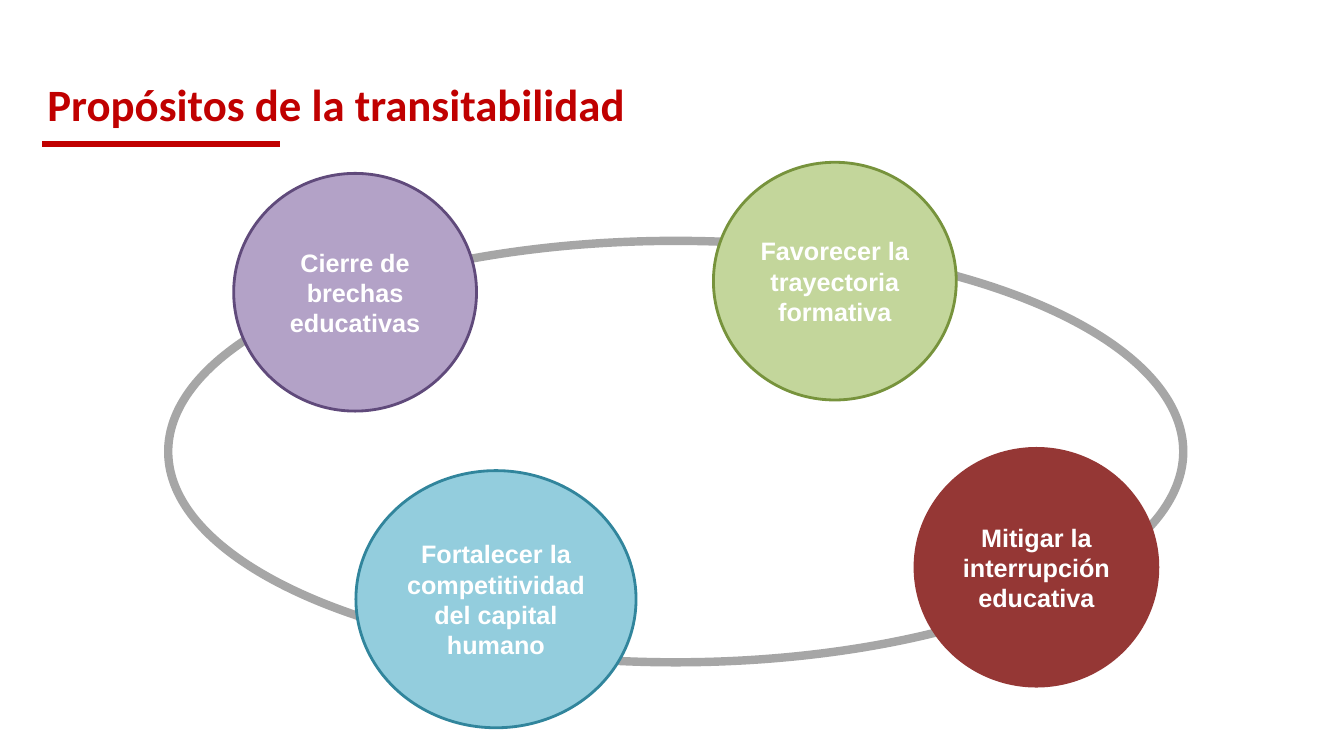
from lxml import etree
from pptx import Presentation
from pptx import util as u
from pptx.dml.color import RGBColor
from pptx.enum import shapes, text
from pptx.oxml.ns import qn

COLORS = {
    "red": "C00000", "ring": "A6A6A6", "white": "FFFFFF",
    "maroon": "953735",
    "green": "C3D69B", "dark_green": "77933C",
    "purple": "B3A2C7", "dark_purple": "604A7B",
    "blue": "93CDDD", "dark_blue": "31859C",
}

PURPOSES = [
    ("Mitigar la interrupción educativa", 23.06, 11.3, 6.12, 5.99, "maroon", "maroon"),
    ("Favorecer la trayectoria formativa", 17.98, 4.09, 6.12, 5.99, "green", "dark_green"),
    ("Cierre de brechas educativas", 5.89, 4.37, 6.12, 5.99, "purple", "dark_purple"),
    ("Fortalecer la competitividad del capital humano", 8.97, 11.86, 7.06, 6.48,
     "blue", "dark_blue"),
]


def color(name):
    return RGBColor.from_string(COLORS[name])


def write(frame, wording, font_name, size, font_color, align):
    frame.text = wording
    frame.word_wrap = True
    frame.vertical_anchor = text.MSO_ANCHOR.MIDDLE
    paragraph = frame.paragraphs[0]
    paragraph.alignment = align
    font = paragraph.runs[0].font
    font.name = font_name
    font.size = u.Pt(size)
    font.bold = True
    font.color.rgb = color(font_color)


def set_line(line, line_color, width):
    line.color.rgb = color(line_color)
    line.width = u.Pt(width)


def add_heading(slide, wording):
    heading = slide.shapes.title
    heading.left, heading.top = u.Cm(0.94), u.Cm(1.7)
    heading.width, heading.height = u.Cm(31.88), u.Cm(2.01)
    write(heading.text_frame, wording, "Calibri", 32, "red", text.PP_ALIGN.LEFT)
    heading.text_frame.paragraphs[0].line_spacing = 0.9


def add_underline(slide):
    underline = slide.shapes.add_connector(
        shapes.MSO_CONNECTOR.STRAIGHT, u.Cm(1.07), u.Cm(3.63), u.Cm(7.06), u.Cm(3.63))
    set_line(underline.line, "red", 4.5)
    etree.SubElement(underline._element.spPr, qn("a:effectLst"))


def add_ellipse(slide, left, top, width, height, line_color, line_width):
    ellipse = slide.shapes.add_shape(
        shapes.MSO_SHAPE.OVAL, u.Cm(left), u.Cm(top), u.Cm(width), u.Cm(height))
    ellipse.shadow.inherit = False
    ellipse.fill.background()
    set_line(ellipse.line, line_color, line_width)
    return ellipse


def add_purpose(slide, wording, left, top, width, height, fill, border):
    purpose = add_ellipse(slide, left, top, width, height, border, 2)
    purpose.fill.solid()
    purpose.fill.fore_color.rgb = color(fill)
    write(purpose.text_frame, wording, "Arial", 18, "white", text.PP_ALIGN.CENTER)


def main():
    """Build the slide on the purposes of educational transit and save it."""
    deck = Presentation()
    deck.slide_width, deck.slide_height = u.Cm(33.87), u.Cm(19.05)
    slide = deck.slides.add_slide(deck.slide_layouts[5])
    add_ellipse(slide, 4.24, 6.07, 25.58, 10.62, "ring", 6)
    add_heading(slide, "Propósitos de la transitabilidad")
    add_underline(slide)
    for purpose in PURPOSES:
        add_purpose(slide, *purpose)
    deck.save("out.pptx")


if __name__ == "__main__":
    main()
